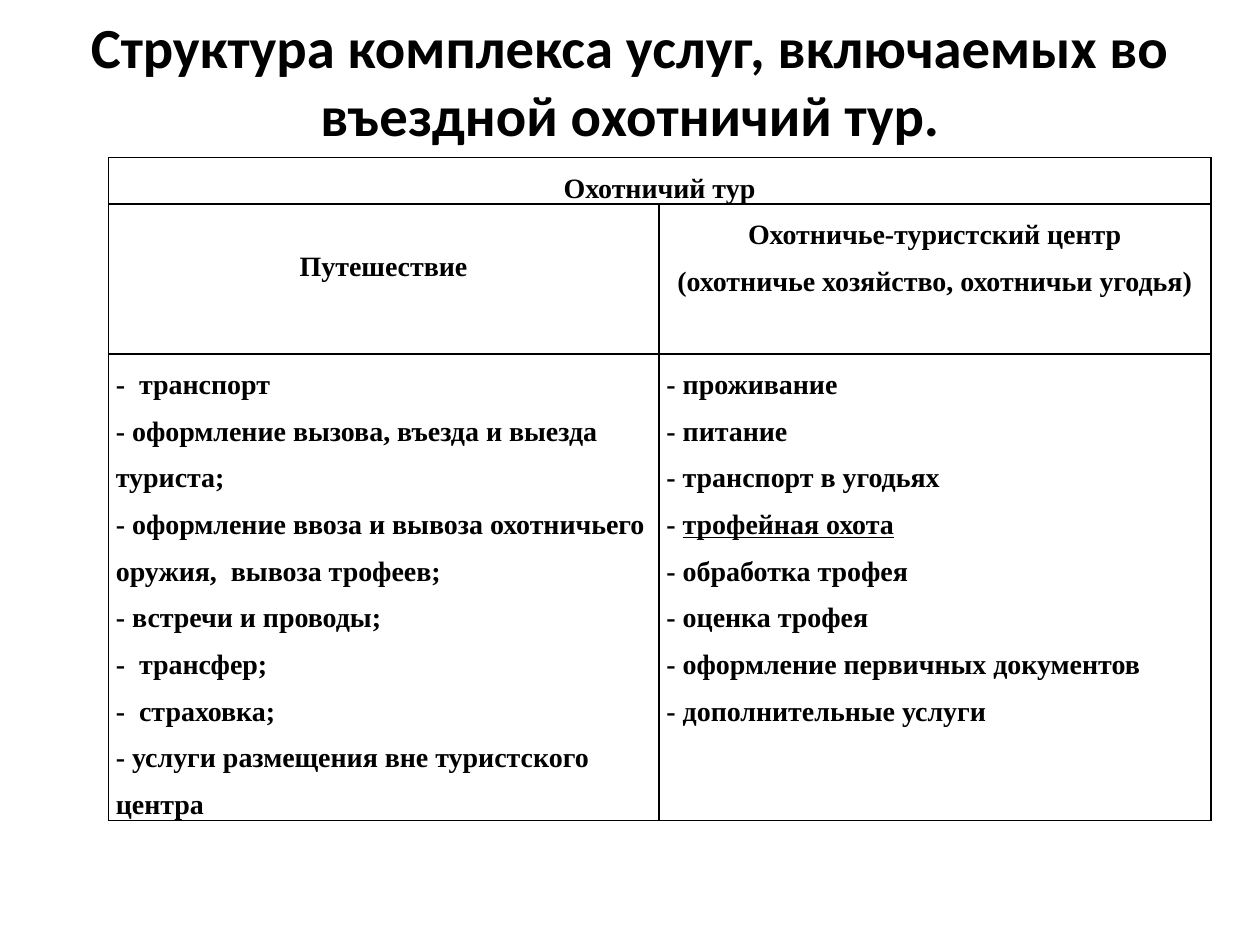
from lxml import etree
from pptx import Presentation
from pptx.dml.color import RGBColor
from pptx.enum.text import MSO_ANCHOR, PP_ALIGN
from pptx.oxml.ns import qn
from pptx.util import Inches, Pt

BLACK = RGBColor(0, 0, 0)
TITLE = "Структура комплекса услуг, включаемых во въездной охотничий тур."
TOUR = "Охотничий тур"
HEADINGS = [
    ["Путешествие"],
    ["Охотничье-туристский центр", "(охотничье хозяйство, охотничьи угодья)"],
]
UNDERLINED = "трофейная охота"
SERVICES = [
    [
        "-  транспорт",
        "- оформление вызова, въезда и выезда туриста;",
        "- оформление ввоза и вывоза охотничьего оружия,  вывоза трофеев;",
        "- встречи и проводы;",
        "-  трансфер;",
        "-  страховка;",
        "- услуги размещения вне туристского центра",
    ],
    [
        "- проживание",
        "- питание",
        "- транспорт в угодьях",
        "- " + UNDERLINED,
        "- обработка трофея",
        "- оценка трофея",
        "- оформление первичных документов",
        "- дополнительные услуги",
    ],
]
COLUMN_WIDTHS = [4.37, 4.38]
ROW_HEIGHTS = [0.37, 1.19, 3.51]


def format_span(span, font, size):
    span.font.name = font
    span.font.size = Pt(size)
    span.font.bold = True
    span.font.color.rgb = BLACK


def add_title(page, left, top, width, height):
    box = page.shapes.title
    box.left, box.top, box.width, box.height = left, top, width, height
    frame = box.text_frame
    frame.text = TITLE
    frame.word_wrap = True
    frame.vertical_anchor = MSO_ANCHOR.MIDDLE
    # The deep bottom margin lifts the two lines above the table
    frame.margin_top = 0
    frame.margin_bottom = Inches(0.59)
    para = frame.paragraphs[0]
    para.alignment = PP_ALIGN.CENTER
    format_span(para.runs[0], "Calibri", 32.4)


def add_borders(cell):
    properties = cell._tc.get_or_add_tcPr()
    for side in ("a:lnL", "a:lnR", "a:lnT", "a:lnB"):
        line = etree.SubElement(properties, qn(side), w=str(Pt(1)))
        fill = etree.SubElement(line, qn("a:solidFill"))
        etree.SubElement(fill, qn("a:srgbClr"), val=str(BLACK))


def fill_cell(cell, lines, alignment):
    cell.text_frame.text = "\n".join(lines)
    for para in cell.text_frame.paragraphs:
        para.alignment = alignment
        para.line_spacing = 1.5
        # Split the underlined words into a run of their own
        if para.text.endswith(UNDERLINED):
            para.runs[0].text = para.text.removesuffix(UNDERLINED)
            span = para.add_run()
            span.text = UNDERLINED
            span.font.underline = True
        for span in para.runs:
            format_span(span, "Times New Roman", 16)


def add_services_table(page, left, top, width, height):
    frame = page.shapes.add_table(
        len(ROW_HEIGHTS), len(COLUMN_WIDTHS), left, top, width, height)
    table = frame.table
    table.first_row = table.horz_banding = False
    for column, size in zip(table.columns, COLUMN_WIDTHS):
        column.width = Inches(size)
    for row, size in zip(table.rows, ROW_HEIGHTS):
        row.height = Inches(size)

    # Plain cells with thin black borders
    for cell in table.iter_cells():
        add_borders(cell)
        cell.fill.background()
        cell.margin_left = cell.margin_right = Inches(0.06)
        cell.margin_top = cell.margin_bottom = 0

    # Heading across both columns, then one heading and list per column
    table.cell(0, 0).merge(table.cell(0, 1))
    fill_cell(table.cell(0, 0), [TOUR], PP_ALIGN.CENTER)
    for index, (heading, services) in enumerate(zip(HEADINGS, SERVICES)):
        fill_cell(table.cell(1, index), heading, PP_ALIGN.CENTER)
        fill_cell(table.cell(2, index), services, PP_ALIGN.LEFT)
    table.cell(1, 0).margin_top = Inches(0.25)


def main():
    deck = Presentation()
    deck.slide_width, deck.slide_height = Inches(10), Inches(7.5)
    page = deck.slides.add_slide(deck.slide_layouts[5])
    add_title(page, Inches(0.5), Inches(0.3), Inches(9), Inches(1.25))
    add_services_table(page, Inches(0.86), Inches(1.25),
                       Inches(sum(COLUMN_WIDTHS)), Inches(sum(ROW_HEIGHTS)))
    deck.save("out.pptx")


if __name__ == "__main__":
    main()
